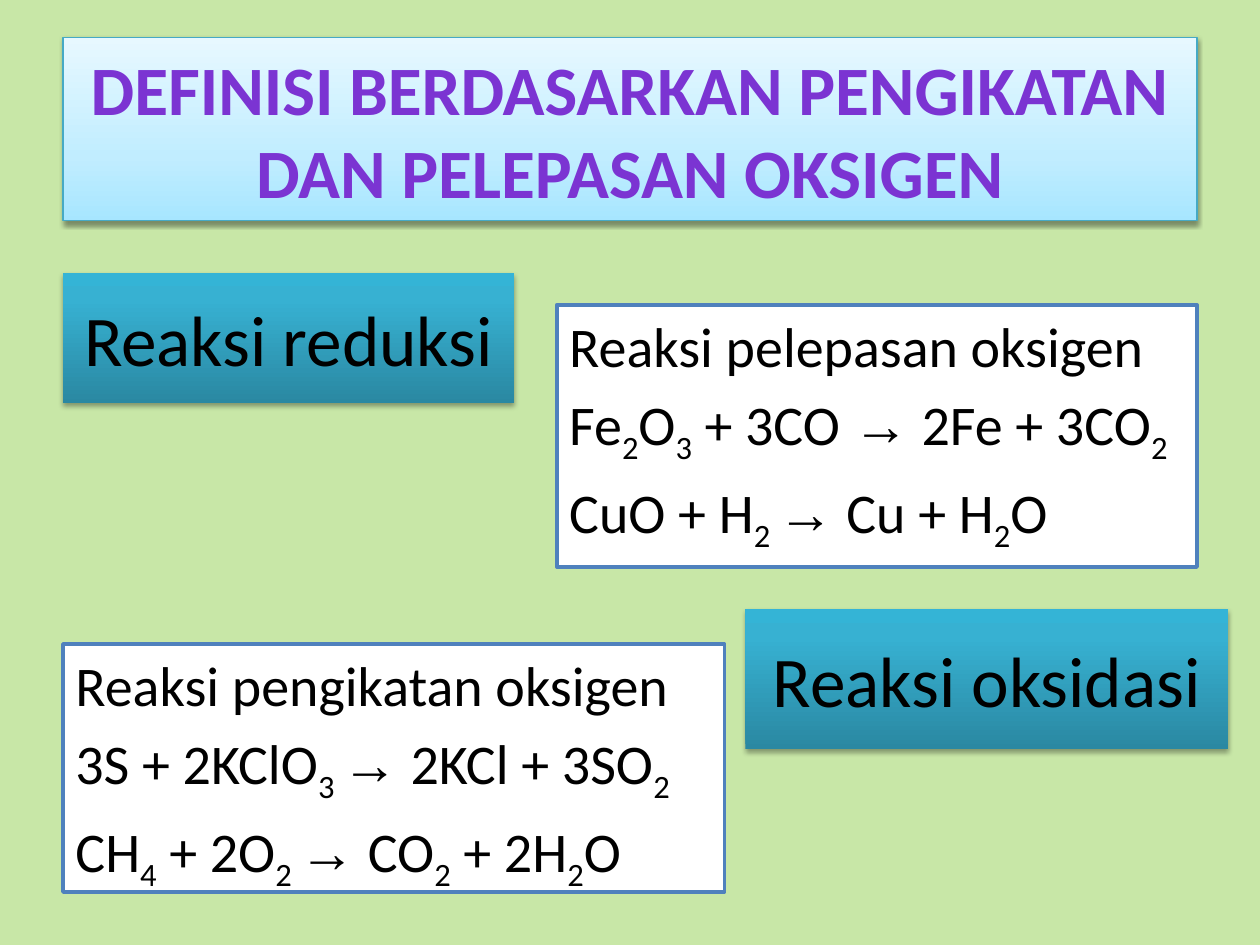
from dataclasses import dataclass
from typing import NamedTuple

from lxml import etree
from pptx import Presentation
from pptx.dml.color import RGBColor
from pptx.enum import shapes, text
from pptx.oxml import ns
from pptx.util import Pt


@dataclass(frozen=True)
class Theme:
    background: str = "C8E7A7"
    title_fill: tuple = ((0, "A7E6FF"), (35, "C1EDFF"), (100, "E7F8FF"))
    title_line: str = "46AAC5"
    title_text: str = "7B34D2"
    label_fill: tuple = ((0, "2A88A2"), (80, "37B1D2"), (100, "34B4D6"))
    panel_fill: str = "FFFFFF"
    panel_line: str = "4F81BD"
    body_text: str = "000000"
    font: str = "Calibri"
    arrow_font: str = "Arial"
    title_size: float = 39.6
    label_size: float = 40.7
    body_size: float = 32


class Box(NamedTuple):
    left: float
    top: float
    width: float
    height: float


THEME = Theme()


def add_element(parent, tag, **attributes):
    values = {name: str(value) for name, value in attributes.items()}
    return etree.SubElement(parent, ns.qn(tag), values)


def add_rectangle(page, box, anchor):
    shape = page.shapes.add_shape(shapes.MSO_SHAPE.RECTANGLE, *map(Pt, box))
    shape.shadow.inherit = False
    shape.text_frame.word_wrap = True
    shape.text_frame.vertical_anchor = anchor
    return shape


def fill_gradient(shape, stops):
    shape.fill.gradient()
    gradient = shape.element.spPr.find(ns.qn("a:gradFill"))
    stop_list = gradient.find(ns.qn("a:gsLst"))
    for stop in list(stop_list):
        stop_list.remove(stop)
    for position, color in stops:
        stop = add_element(stop_list, "a:gs", pos=position * 1000)
        add_element(stop, "a:srgbClr", val=color)
    gradient.find(ns.qn("a:lin")).set("ang", str(270 * 60000))


def add_shadow(shape, opacity, blur, distance):
    effects = shape.element.spPr.find(ns.qn("a:effectLst"))
    shadow = add_element(effects, "a:outerShdw", blurRad=Pt(blur), dist=Pt(distance),
                         dir=90 * 60000, rotWithShape=0)
    color = add_element(shadow, "a:srgbClr", val="000000")
    add_element(color, "a:alpha", val=opacity * 1000)


def set_line(shape, color, width):
    shape.line.color.rgb = RGBColor.from_string(color)
    shape.line.width = Pt(width)


def style_paragraph(para, size, color, align, bold=False):
    para.alignment = align
    para.font.name = THEME.font
    para.font.size = Pt(size)
    para.font.bold = bold
    para.font.color.rgb = RGBColor.from_string(color)


def add_title(page, box, wording):
    shape = add_rectangle(page, box, text.MSO_ANCHOR.MIDDLE)
    fill_gradient(shape, THEME.title_fill)
    set_line(shape, THEME.title_line, 0.75)
    add_shadow(shape, 38, 3.1, 1.6)
    shape.text_frame.text = wording
    style_paragraph(shape.text_frame.paragraphs[0], THEME.title_size,
                    THEME.title_text, text.PP_ALIGN.CENTER, bold=True)


def add_label(page, box, wording):
    shape = add_rectangle(page, box, text.MSO_ANCHOR.MIDDLE)
    fill_gradient(shape, THEME.label_fill)
    shape.line.fill.background()
    add_shadow(shape, 35, 3.1, 1.8)
    shape.text_frame.text = wording
    style_paragraph(shape.text_frame.paragraphs[0], THEME.label_size,
                    THEME.body_text, text.PP_ALIGN.CENTER)


def add_formula(para, formula):
    for index, piece in enumerate(formula.replace("→", "__→__").split("_")):
        if not piece:
            continue
        span = para.add_run()
        span.text = piece
        if index % 2:
            span.font._element.set("baseline", "-25000")
        if piece == "→":
            span.font.name = THEME.arrow_font


def add_panel(page, box, lines):
    shape = add_rectangle(page, box, text.MSO_ANCHOR.TOP)
    shape.fill.solid()
    shape.fill.fore_color.rgb = RGBColor.from_string(THEME.panel_fill)
    set_line(shape, THEME.panel_line, 2)
    frame = shape.text_frame
    for index, line in enumerate(lines):
        para = frame.add_paragraph() if index else frame.paragraphs[0]
        style_paragraph(para, THEME.body_size, THEME.body_text, text.PP_ALIGN.LEFT)
        para.space_before = Pt(THEME.body_size * 0.2)
        add_formula(para, line)


def main():
    deck = Presentation()
    deck.slide_width, deck.slide_height = Pt(720), Pt(540)
    page = deck.slides.add_slide(deck.slide_layouts[6])
    page.background.fill.solid()
    page.background.fill.fore_color.rgb = RGBColor.from_string(THEME.background)

    add_title(page, Box(36, 21.6, 648, 104.4),
              "DEFINISI BERDASARKAN PENGIKATAN DAN PELEPASAN OKSIGEN")
    add_label(page, Box(36, 156.2, 257.8, 74.2), "Reaksi reduksi")
    add_panel(page, Box(318.2, 174.2, 365.8, 149.8), (
        "Reaksi pelepasan oksigen",
        "Fe_2_O_3_ + 3CO → 2Fe + 3CO_2_",
        "CuO + H_2 _→ Cu + H_2_O",
    ))
    add_label(page, Box(426, 348, 275.8, 80), "Reaksi oksidasi")
    add_panel(page, Box(36, 368, 378, 141.8), (
        "Reaksi pengikatan oksigen",
        "3S + 2KClO_3 _→ 2KCl + 3SO_2_",
        "CH_4_ + 2O_2 _→ CO_2_ + 2H_2_O",
    ))
    deck.save("out.pptx")


if __name__ == "__main__":
    main()
